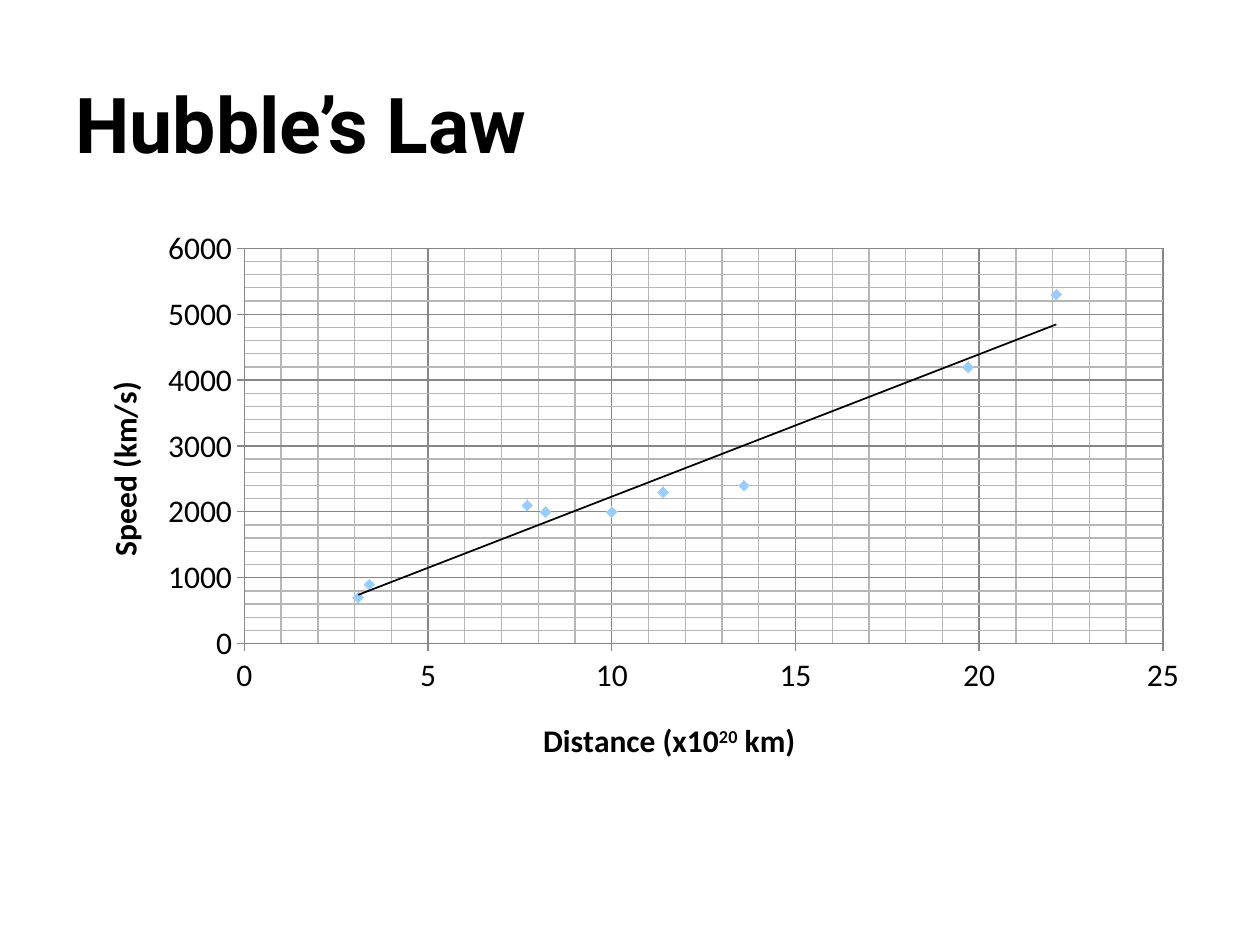
from lxml.etree import SubElement
from pptx import Presentation
from pptx.chart.data import XyChartData
from pptx.dml.color import RGBColor as Rgb
from pptx.enum.chart import XL_CHART_TYPE as Kind, XL_MARKER_STYLE as Mark, XL_TICK_MARK as Tick
from pptx.enum.text import MSO_ANCHOR as Anchor
from pptx.oxml import parse_xml
from pptx.oxml.ns import nsdecls, qn
from pptx.util import Inches, Pt

theme = dict(
    ink=Rgb.from_string("000000"), dot=Rgb.from_string("99CCFF"),
    major=Rgb.from_string("878787"), minor=Rgb.from_string("B7B7B7"),
    head=Pt(44), body=Pt(18), thin=Pt(0.75), face="Roboto", text="Calibri",
)
stroke = (
    f"<c:spPr {nsdecls('c', 'a')}><a:ln w='%d'><a:solidFill>"
    "<a:srgbClr val='%s'/></a:solidFill></a:ln></c:spPr>"
)


def style(item, **values):
    for name, value in values.items():
        setattr(item, name, value)


def place(node, index, **parts):
    for old in node.findall(qn("c:layout")):
        node.remove(old)
    lay = parse_xml(f"<c:layout {nsdecls('c')}/>")
    box = SubElement(lay, qn("c:manualLayout"))
    for name, value in parts.items():
        SubElement(box, qn(f"c:{name}")).set("val", str(value))
    node.insert(index, lay)


deck = Presentation()
style(deck, slide_width=Inches(10), slide_height=Inches(7.5))
wide, high = deck.slide_width, deck.slide_height
slide = deck.slides.add_slide(deck.slide_layouts[6])
left, span = int(wide * 0.05), int(wide * 0.9)

frame = slide.shapes.add_textbox(left, int(high * 0.09), span, int(high * 0.08)).text_frame
style(frame, word_wrap=True, vertical_anchor=Anchor.MIDDLE)
run = frame.paragraphs[0].add_run()
run.text = "Hubble’s Law"
style(run.font, name=theme["face"], size=theme["head"], bold=True)
run.font.color.rgb = theme["ink"]

data = XyChartData()
speeds = data.add_series("Series 1")
for point in (
    (7.7, 2100), (8.2, 2000), (11.4, 2300), (13.6, 2400), (3.4, 900),
    (3.1, 700), (8.2, 2000), (22.1, 5300), (10, 2000), (19.7, 4200),
):
    speeds.add_data_point(*point)
chart = slide.shapes.add_chart(
    Kind.XY_SCATTER, left, Inches(1.75), span, Inches(4.42), data
).chart
style(chart, has_legend=False, has_title=False)
style(chart.font, name=theme["text"], size=theme["body"])
chart.font.color.rgb = theme["ink"]
area = chart.plots[0]
area.vary_by_categories = False
place(chart._chartSpace.chart.plotArea, 0, layoutTarget="inner", xMode="edge",
      yMode="edge", x=0.16, y=0.05, w=0.81, h=0.71)

axes = (
    (chart.category_axis, 25, 5, 1, 0.42, 0.89,
     (("Distance (x10", 0), ("20", 30000), (" km)", 0))),
    (chart.value_axis, 6000, 1000, 200, 0.03, 0.28, (("Speed (km/s)", 0),)),
)
for axis, top, step, small, x, y, words in axes:
    style(axis, minimum_scale=0, maximum_scale=top, major_unit=step, minor_unit=small,
          has_major_gridlines=True, has_minor_gridlines=True,
          major_tick_mark=Tick.OUTSIDE, minor_tick_mark=Tick.NONE)
    style(axis.tick_labels, number_format="General", number_format_is_linked=False)
    for part in (axis, axis.major_gridlines):
        part.format.line.color.rgb = theme["major"]
        part.format.line.width = theme["thin"]
    fine = axis._element.find(qn("c:minorGridlines"))
    fine.append(parse_xml(stroke % (theme["thin"], theme["minor"])))
    title = axis.axis_title
    para = title.text_frame.paragraphs[0]
    for word, lift in words:
        run = para.add_run()
        run.text = word
        style(run.font, name=theme["text"], size=theme["body"], bold=True)
        run.font.color.rgb = theme["ink"]
        if lift:
            run._r.get_or_add_rPr().set("baseline", str(lift))
    place(title._element, 1, xMode="edge", yMode="edge", x=x, y=y)

series = area.series[0]
series.format.line.fill.background()
style(series.marker, style=Mark.DIAMOND, size=6)
series.marker.format.fill.solid()
series.marker.format.fill.fore_color.rgb = theme["dot"]
series.marker.format.line.fill.background()
trend = parse_xml(
    f"<c:trendline {nsdecls('c')}><c:trendlineType val='linear'/>"
    "<c:dispRSqr val='0'/><c:dispEq val='0'/></c:trendline>"
)
trend.insert(0, parse_xml(stroke % (Pt(1), theme["ink"])))
series._element.find(qn("c:xVal")).addprevious(trend)

deck.save("out.pptx")
